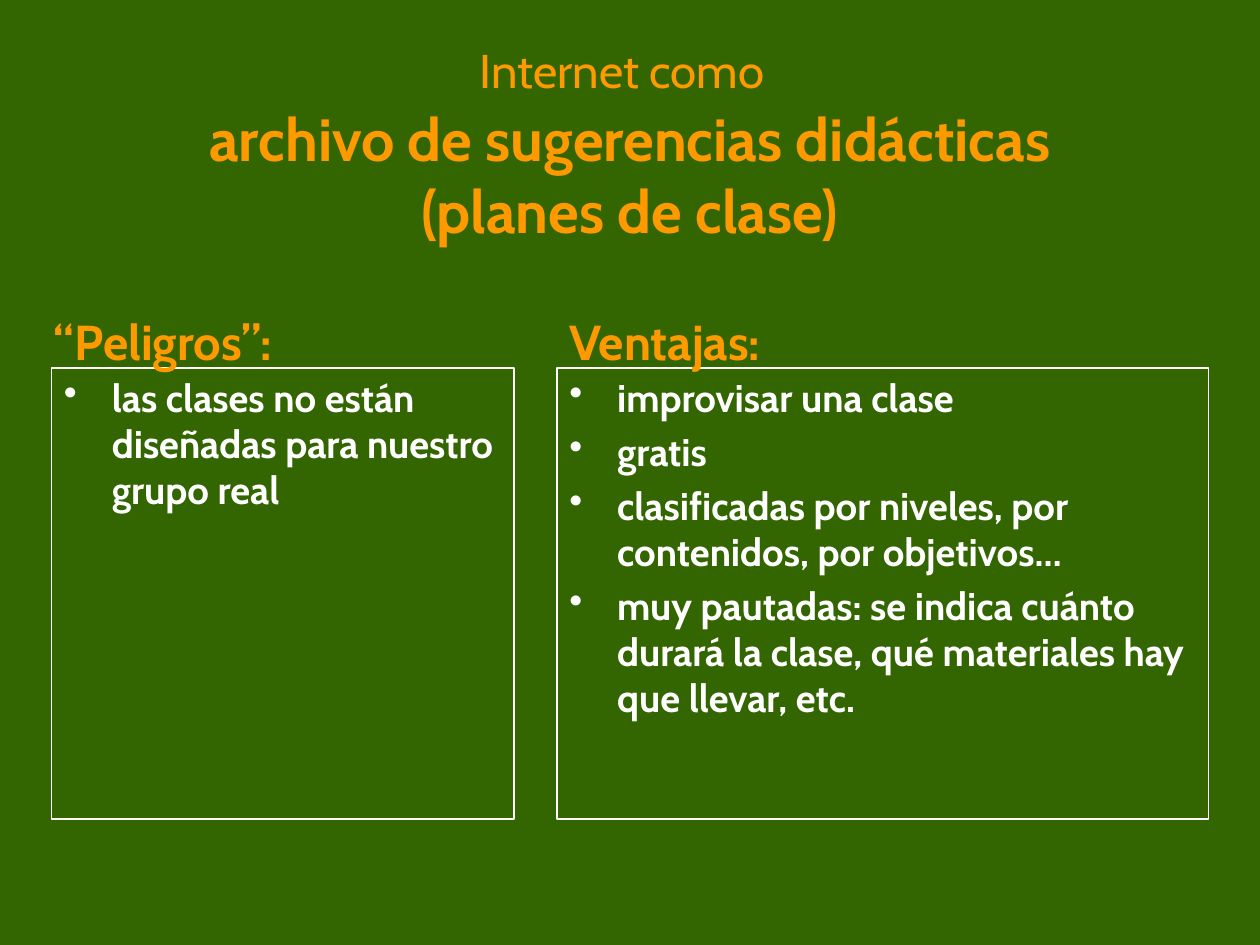
import dataclasses

import pptx
import pptx.dml.color
import pptx.enum.shapes
import pptx.enum.text
import pptx.oxml
import pptx.oxml.ns
import pptx.util

Inches = pptx.util.Inches
Pt = pptx.util.Pt
RGBColor = pptx.dml.color.RGBColor
Align = pptx.enum.text.PP_ALIGN
Anchor = pptx.enum.text.MSO_ANCHOR

GREEN = RGBColor(0x33, 0x66, 0x00)
ORANGE = RGBColor(0xFF, 0x99, 0x00)
WHITE = RGBColor(0xFF, 0xFF, 0xFF)

HEAD = {"name": "Cabin", "size": Pt(28), "bold": True}
ITEM = {"name": "Cabin", "size": Pt(22), "bold": True}
INDENT = Inches(0.38)
BOX_TOP, BOX_TALL = 2.92, 3.58
HEAD_TOP, HEAD_TALL = 2.42, 0.58


@dataclasses.dataclass
class Column:
    head: str
    head_left: float
    head_wide: float
    left: float
    wide: float
    items: list[str]


COLUMNS = [
    Column("“Peligros”:", 0.33, 3.33, 0.41, 3.67, [
        "las clases no están diseñadas para nuestro grupo real",
    ]),
    Column("Ventajas:", 4.42, 1.94, 4.42, 5.17, [
        "improvisar una clase",
        "gratis",
        "clasificadas por niveles, por contenidos, por objetivos…",
        "muy pautadas: se indica cuánto durará la clase, "
        "qué materiales hay que llevar, etc.",
    ]),
]


def add_run(para, text: str, color: RGBColor, form: dict) -> None:
    run = para.add_run()
    run.text = text
    run.font.color.rgb = color
    for name, value in form.items():
        setattr(run.font, name, value)


def set_hang(para, size: float, bullet: bool = False) -> None:
    """Give a paragraph its space above, hanging indent and bullet."""
    para.alignment = Align.LEFT
    para.space_before = Pt(size * 0.2)
    props = para._p.get_or_add_pPr()
    props.set("marL", str(INDENT))
    props.set("indent", str(-INDENT))
    if bullet:
        mark = pptx.oxml.ns.qn("a:buChar")
        props.append(props.makeelement(mark, {"char": "•"}))


def add_text(slide, left: float, top: float, wide: float, tall: float):
    box = slide.shapes.add_textbox(
        Inches(left), Inches(top), Inches(wide), Inches(tall))
    box.text_frame.word_wrap = True
    return box.text_frame


def add_title(slide) -> None:
    frame = add_text(slide, 0.75, 0.42, 8.5, 1.25)
    frame.vertical_anchor = Anchor.MIDDLE
    para = frame.paragraphs[0]
    para.alignment = Align.CENTER
    add_run(para, "Internet como", ORANGE, {"name": "Cabin", "size": Pt(27)})
    # A larger space sets the height of the first line
    add_run(para, " ", ORANGE, {"name": "Cabin", "size": Pt(40), "bold": True})
    for line in ("archivo de sugerencias didácticas", "(planes de clase)"):
        para.add_line_break()
        add_run(para, line, ORANGE, HEAD | {"size": Pt(34)})


def add_column(slide, col: Column) -> None:
    # Framed list
    box = slide.shapes.add_shape(
        pptx.enum.shapes.MSO_SHAPE.RECTANGLE, Inches(col.left),
        Inches(BOX_TOP), Inches(col.wide), Inches(BOX_TALL))
    box.shadow.inherit = False
    box.fill.background()
    box.line.color.rgb = WHITE
    box.line.width = Pt(0.75)
    frame = box.text_frame
    frame.word_wrap = True
    frame.vertical_anchor = Anchor.TOP
    for i, item in enumerate(col.items):
        para = frame.add_paragraph() if i else frame.paragraphs[0]
        set_hang(para, 22, bullet=True)
        add_run(para, item, WHITE, ITEM)

    # Heading above the list
    para = add_text(slide, col.head_left, HEAD_TOP,
                    col.head_wide, HEAD_TALL).paragraphs[0]
    set_hang(para, 28)
    add_run(para, col.head, ORANGE, HEAD)


def main() -> None:
    deck = pptx.Presentation()
    deck.slide_width, deck.slide_height = Inches(10), Inches(7.5)
    slide = deck.slides.add_slide(deck.slide_layouts[6])
    slide.background.fill.solid()
    slide.background.fill.fore_color.rgb = GREEN
    for col in COLUMNS:
        add_column(slide, col)
    add_title(slide)
    deck.save("out.pptx")


if __name__ == "__main__":
    main()
